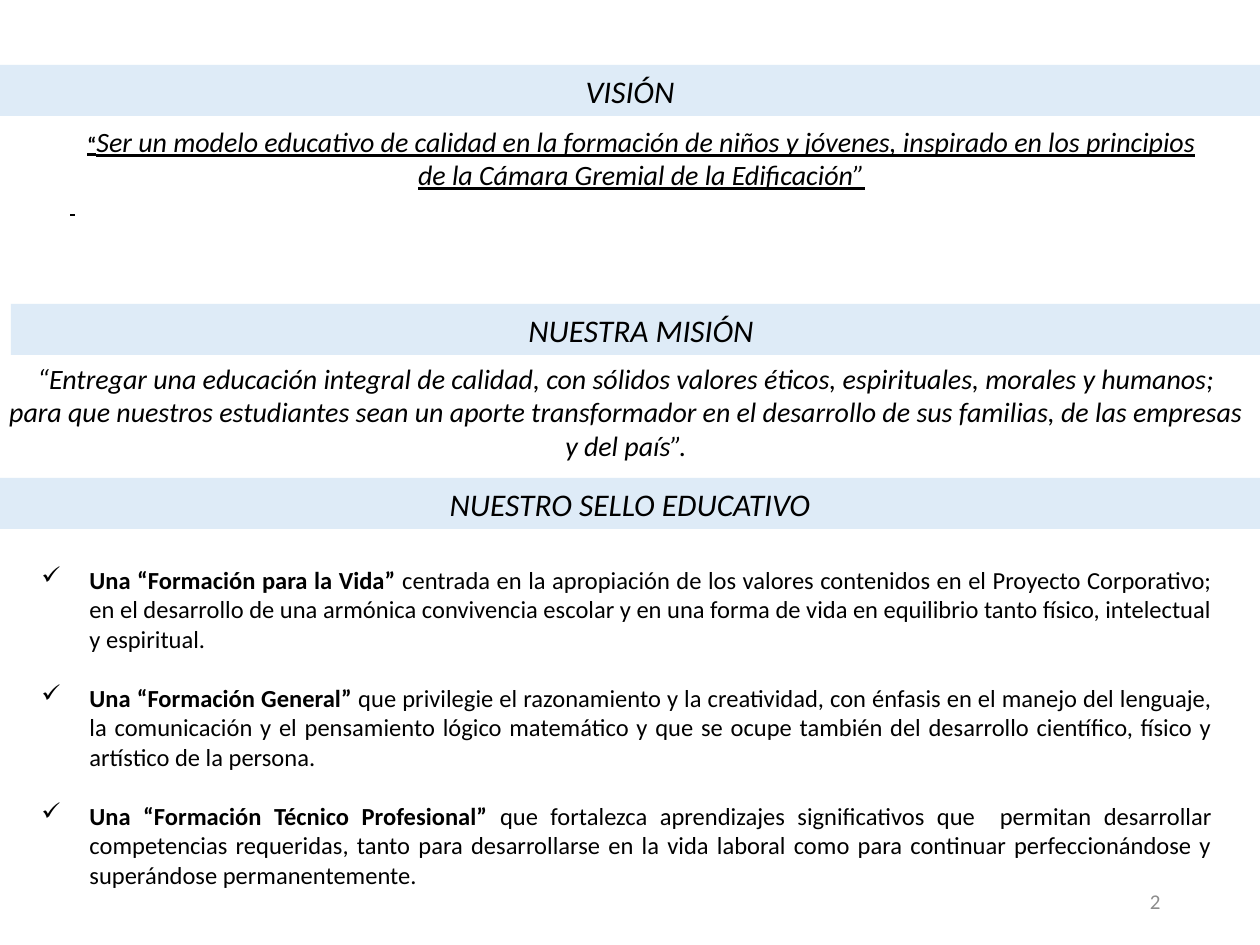
from lxml import etree
from pptx import Presentation
from pptx.dml.color import RGBColor
from pptx.enum.shapes import MSO_SHAPE
from pptx.enum.text import MSO_ANCHOR, PP_ALIGN
from pptx.oxml.ns import qn
from pptx.util import Emu, Pt

RECT = MSO_SHAPE.RECTANGLE
TOP, MIDDLE = MSO_ANCHOR.TOP, MSO_ANCHOR.MIDDLE
LEFT, CENTER = PP_ALIGN.LEFT, PP_ALIGN.CENTER
RIGHT, JUSTIFY = PP_ALIGN.RIGHT, PP_ALIGN.JUSTIFY

BLACK = RGBColor(0x00, 0x00, 0x00)
GRAY = RGBColor(0x8C, 0x8C, 0x8C)
PALE_BLUE = RGBColor(0xDE, 0xEB, 0xF7)

EMU_PER_PX = 914400 // 126
WIDTH, HEIGHT = 1260, 945
BAND_HEIGHT = 51
BULLET_INDENT = 48
NBSP = chr(160)


def px(length):
    return Emu(length * EMU_PER_PX)


class SlideBuilder:
    font_name = "Calibri"

    def __init__(self, slide):
        self.slide = slide

    def paragraph(self, paragraph, runs, align):
        """Fill a paragraph with (text, font format) pairs."""
        paragraph.alignment = align
        for text, font_format in runs:
            run = paragraph.add_run()
            run.text = text
            run.font.name = self.font_name
            run.font.color.rgb = font_format.get("color", BLACK)
            for name, value in font_format.items():
                if name != "color":
                    setattr(run.font, name, value)

    def band(self, left, top, title):
        band = self.slide.shapes.add_shape(
            RECT, px(left), px(top), px(WIDTH), px(BAND_HEIGHT))
        band.shadow.inherit = False
        band.fill.solid()
        band.fill.fore_color.rgb = PALE_BLUE
        band.line.fill.background()
        band.text_frame.word_wrap = True
        self.paragraph(band.text_frame.paragraphs[0],
                       [(title, {"size": Pt(18), "italic": True})], CENTER)

    def text(self, box, paragraphs, anchor=TOP):
        """Add a text box of (runs, alignment) paragraphs."""
        frame = self.slide.shapes.add_textbox(*map(px, box)).text_frame
        frame.word_wrap = True
        frame.vertical_anchor = anchor
        for index, (runs, align) in enumerate(paragraphs):
            paragraph = frame.add_paragraph() if index else frame.paragraphs[0]
            self.paragraph(paragraph, runs, align)
        return frame

    def checklist(self, box, items, margin_top, gap):
        bold, regular = ({"size": Pt(14), "bold": weight} for weight in (True, False))
        frame = self.text(box, [([(lead, bold), (rest, regular)], JUSTIFY)
                                for lead, rest in items])
        frame.margin_top = px(margin_top)
        for index, paragraph in enumerate(frame.paragraphs):
            if index:
                paragraph.space_before = gap
            properties = paragraph._p.get_or_add_pPr()
            properties.set("marL", str(px(BULLET_INDENT)))
            properties.set("indent", str(-px(BULLET_INDENT)))
            etree.SubElement(properties, qn("a:buChar")).set("char", "✓")


SEAL_ITEMS = [
    ("Una “Formación para la Vida”",
     " centrada en la apropiación de los valores contenidos en el Proyecto "
     "Corporativo; en el desarrollo de una armónica convivencia escolar y en una "
     "forma de vida en equilibrio tanto físico, intelectual y espiritual."),
    ("Una “Formación General”",
     " que privilegie el razonamiento y la creatividad, con énfasis en el manejo "
     "del lenguaje, la comunicación y el pensamiento lógico matemático y que se "
     "ocupe también del desarrollo científico, físico y artístico de la persona."),
    ("Una “Formación Técnico Profesional”",
     " que fortalezca aprendizajes significativos que  permitan desarrollar "
     "competencias requeridas, tanto para desarrollarse en la vida laboral como "
     "para continuar perfeccionándose y superándose permanentemente."),
]


def main():
    presentation = Presentation()
    presentation.slide_width, presentation.slide_height = px(WIDTH), px(HEIGHT)
    blank_layout = presentation.slide_layouts[6]
    builder = SlideBuilder(presentation.slides.add_slide(blank_layout))

    quote = {"size": Pt(16), "italic": True}
    small_mark = {"size": Pt(12), "bold": True, "underline": True}

    # Vision, closed by a short underlined mark
    builder.text((58, 118, 1167, 131), [
        ([("“", small_mark),
          ("Ser un modelo educativo de calidad en la formación de niños y jóvenes, "
           "inspirado en los principios de la Cámara Gremial de la Edificación”",
           {**quote, "underline": True})], CENTER),
        ([(NBSP, small_mark)], LEFT),
    ])
    builder.band(0, 65, "VISIÓN")

    # Mission
    builder.text((-4, 355, WIDTH, 115), [
        ([("“Entregar una educación integral de calidad, con sólidos valores éticos, "
           "espirituales, morales y humanos; para que nuestros estudiantes sean un "
           "aporte transformador en el desarrollo de sus familias, de las empresas "
           "y del país”.", quote)], CENTER),
    ])
    builder.band(11, 304, "NUESTRA MISIÓN")

    # Educational seal
    builder.checklist((29, 533, 1196, 364), SEAL_ITEMS, margin_top=32, gap=Pt(17))
    builder.band(0, 478, "NUESTRO SELLO EDUCATIVO")

    # Page number
    builder.text((890, 876, 283, 50),
                 [([("2", {"size": Pt(12), "color": GRAY})], RIGHT)], MIDDLE)

    presentation.save("out.pptx")


if __name__ == "__main__":
    main()
